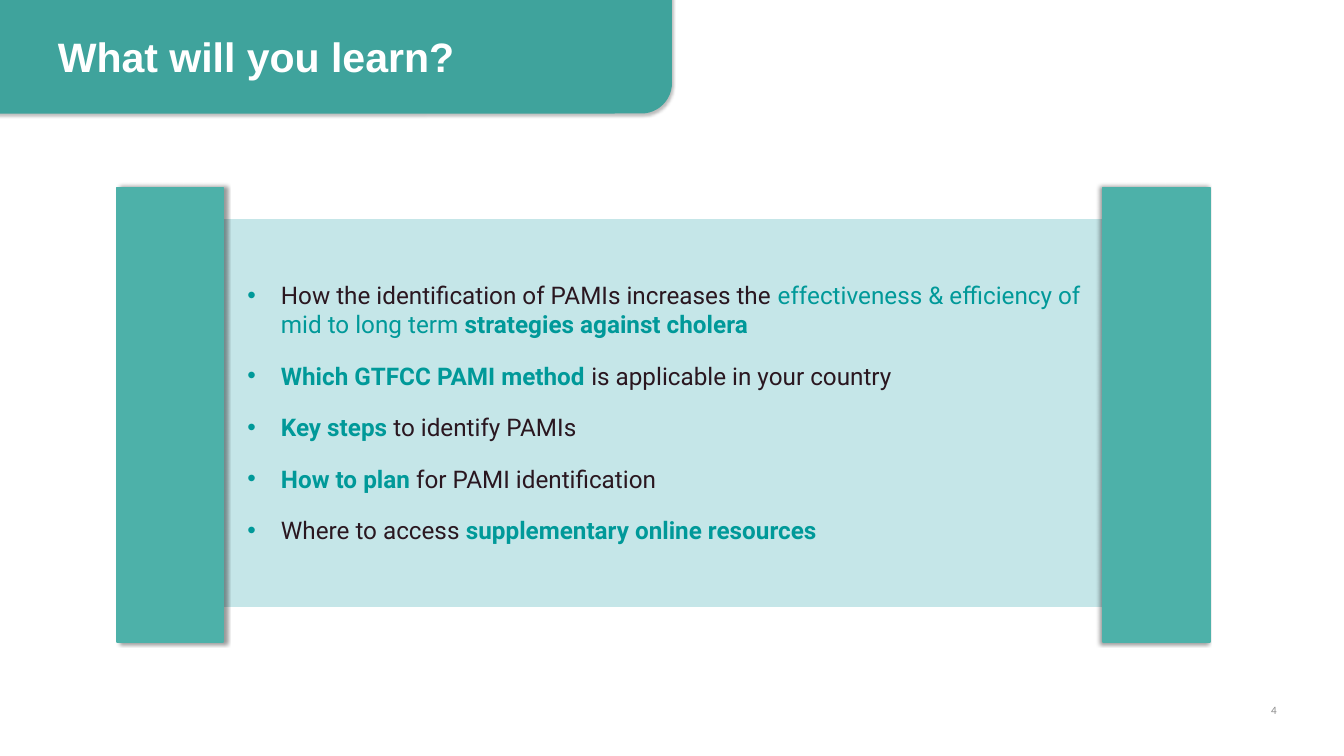
"""Build the learning objectives slide with a scroll panel and bullet list."""
from lxml import etree
from pptx import Presentation
from pptx.dml.color import RGBColor
from pptx.enum.shapes import MSO_SHAPE
from pptx.enum.text import MSO_ANCHOR, MSO_AUTO_SIZE, PP_ALIGN
from pptx.oxml import parse_xml
from pptx.oxml.ns import nsdecls, qn
from pptx.util import Inches, Pt

RECT, ROUNDED = MSO_SHAPE.RECTANGLE, MSO_SHAPE.ROUNDED_RECTANGLE
TOP = MSO_ANCHOR.TOP
NO_FIT = MSO_AUTO_SIZE.NONE
LEFT, RIGHT = PP_ALIGN.LEFT, PP_ALIGN.RIGHT

COLORS = {
    "panel": "C5E6E8",
    "roll": "4DB1A9",
    "header": "209D94",
    "accent": "009999",
    "dark": "2A1720",
    "white": "FFFFFF",
    "grey": "8C8C8C",
}


def add_run(p, text, font="Roboto", size=26, color="dark", bold=False):
    r = p.add_run()
    r.text = text
    r.font.name = font
    r.font.size = Pt(size)
    r.font.bold = bold
    r.font.color.rgb = RGBColor.from_string(COLORS[color])


def add_shadow(sp, alpha, blur, dist, angle):
    sp.element.spPr.append(parse_xml(
        f'<a:effectLst {nsdecls("a")}><a:outerShdw blurRad="{Pt(blur)}" dist="{Pt(dist)}" '
        f'dir="{angle * 60000}" algn="ctr" rotWithShape="0"><a:srgbClr val="000000">'
        f'<a:alpha val="{alpha * 1000}"/></a:srgbClr></a:outerShdw></a:effectLst>'))


prs = Presentation()
prs.slide_width, prs.slide_height = Inches(20), Inches(11.25)
s = prs.slides.add_slide(prs.slide_layouts[1])
title, body = s.shapes.title, s.placeholders[1]

scroll = [
    (3.12, 3.27, 13.84, 5.75, "panel", None),
    (1.74, 2.79, 1.58, 6.77, "roll", 0),
    (16.42, 2.79, 1.58, 6.77, "roll", 180),
]
for x, y, w, h, color, angle in scroll:
    sp = s.shapes.add_shape(RECT, Inches(x), Inches(y), Inches(w), Inches(h))
    sp.fill.solid()
    sp.fill.fore_color.rgb = RGBColor.from_string(COLORS[color])
    sp.line.color.rgb = RGBColor.from_string(COLORS[color])
    sp.line.width = Pt(2)
    if angle is None:
        sp.shadow.inherit = False
    else:
        add_shadow(sp, 40, 4, 3, angle)

header = s.shapes.add_shape(ROUNDED, Inches(-0.98), Inches(-1.57), Inches(10.98), Inches(3.26))
header.adjustments[0] = 0.14
header.fill.solid()
header.fill.fore_color.rgb = RGBColor.from_string(COLORS["header"])
header.line.fill.background()
etree.SubElement(header.element.spPr.find(".//" + qn("a:srgbClr")), qn("a:alpha"), val="80000")
add_shadow(header, 32, 3.5, 2.2, 90)

number = s.shapes.add_textbox(Inches(14.4), Inches(10.46), Inches(4.6), Inches(0.2))
boxes = [
    (body, 3.58, 4.12, 12.85, 4.07),
    (title, 0.86, 0.57, 10.37, 0.66),
    (number, 14.4, 10.46, 4.6, 0.2),
]
for sp, x, y, w, h in boxes:
    sp.left, sp.top, sp.width, sp.height = Inches(x), Inches(y), Inches(w), Inches(h)
    s.shapes.element.append(sp.element)
    tf = sp.text_frame
    tf.word_wrap = True
    tf.auto_size = NO_FIT
    tf.vertical_anchor = TOP
    if sp is not body:
        tf.margin_left = tf.margin_right = tf.margin_top = tf.margin_bottom = 0

p = title.text_frame.paragraphs[0]
p.alignment = LEFT
p.line_spacing = Pt(45.2)
add_run(p, "What will you learn?", font="Arial", size=44, color="white", bold=True)

p = number.text_frame.paragraphs[0]
p.alignment = RIGHT
add_run(p, "4", font="Calibri", size=12, color="grey")

plain = {"color": "dark"}
accent = {"color": "accent"}
strong = {"color": "accent", "bold": True}
objectives = [
    [("How the identification of PAMIs increases the ", plain),
     ("effectiveness & efficiency of mid to long term ", accent),
     ("strategies against cholera", strong)],
    [("Which GTFCC PAMI method ", strong), ("is applicable in your country", plain)],
    [("Key steps ", strong), ("to identify PAMIs", plain)],
    [("How to plan", strong), (" for PAMI identification", plain)],
    [("Where to access ", plain), ("supplementary online resources", strong)],
]
tf = body.text_frame
for i, runs in enumerate(objectives):
    p = tf.add_paragraph() if i else tf.paragraphs[0]
    pPr = p._p.get_or_add_pPr()
    pPr.set("marL", str(Inches(0.5)))
    pPr.set("indent", str(Inches(-0.5)))
    bullet_color = etree.SubElement(pPr, qn("a:buClr"))
    etree.SubElement(bullet_color, qn("a:srgbClr"), val=COLORS["accent"])
    etree.SubElement(pPr, qn("a:buFont"), typeface="Arial")
    etree.SubElement(pPr, qn("a:buChar"), char="•")
    p.space_before = Pt(0)
    p.space_after = Pt(24)
    for text, style in runs:
        add_run(p, text, **style)

prs.save("out.pptx")
